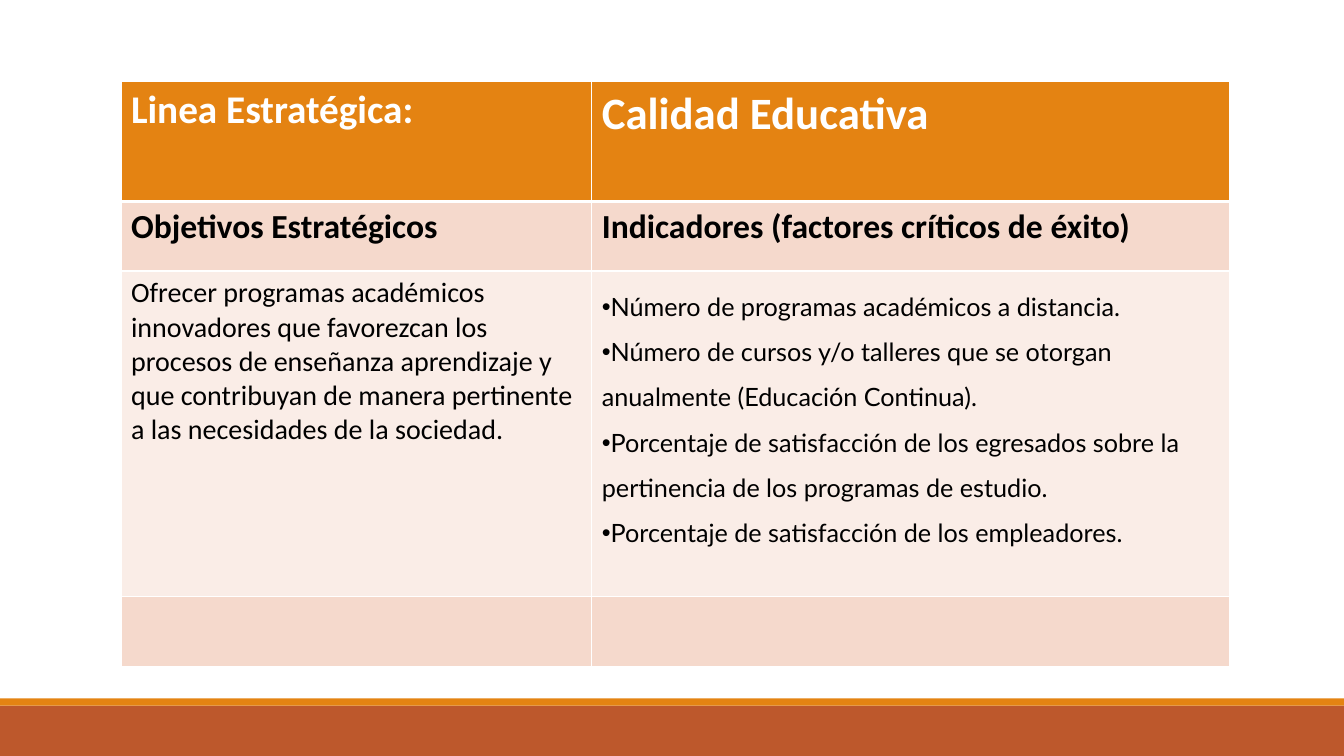
from lxml.etree import SubElement
from pptx import Presentation
from pptx.dml.color import RGBColor
from pptx.enum.shapes import MSO_SHAPE
from pptx.oxml.ns import qn
from pptx.util import Inches, Pt

ORANGE, RUST, WHITE, BLACK = "E48312", "BD582C", "FFFFFF", "000000"
ROW_FILLS = [ORANGE, "F5D9CC", "FAEDE7", "F5D9CC"]
COLUMN_WIDTHS = [4.67, 6.33]
ROW_HEIGHTS = [1.19, 0.69, 3.23, 0.69]

OBJECTIVE = (
    "Ofrecer programas académicos innovadores que favorezcan los procesos de "
    "enseñanza aprendizaje y que contribuyan de manera pertinente a las "
    "necesidades de la sociedad."
)
INDICATORS = [
    "Número de programas académicos a distancia.",
    "Número de cursos y/o talleres que se otorgan anualmente (Educación Continua).",
    "Porcentaje de satisfacción de los egresados sobre la pertinencia de los "
    "programas de estudio.",
    "Porcentaje de satisfacción de los empleadores.",
]


def color(hex_string):
    return RGBColor.from_string(hex_string)


def write_text(paragraph, text, size=20, font="Calibri", fill=BLACK, bold=False,
               spacing=None, bullet=None):
    run = paragraph.add_run()
    run.text = text
    run.font.size = Pt(size)
    run.font.name = font
    run.font.bold = bold
    run.font.color.rgb = color(fill)
    if spacing:
        paragraph.line_spacing = spacing
    if bullet:
        properties = paragraph._p.get_or_add_pPr()
        SubElement(properties, qn("a:buFont"), typeface="Arial")
        SubElement(properties, qn("a:buChar"), char=bullet)


def set_borders(cell, top=1, bottom=1):
    """Draw white cell borders, with widths in points."""
    properties = cell._tc.get_or_add_tcPr()
    widths = {"a:lnL": 1, "a:lnR": 1, "a:lnT": top, "a:lnB": bottom}
    for position, (tag, width) in enumerate(widths.items()):
        line = SubElement(properties, qn(tag), w=str(Pt(width)))
        fill = SubElement(line, qn("a:solidFill"))
        SubElement(fill, qn("a:srgbClr"), val=WHITE)
        # Border lines come before the cell fill
        properties.insert(position, line)


def add_footer(slide, left, top, width, height):
    stripe = 0.07
    bands = [(top + stripe, height - stripe, RUST), (top, stripe, ORANGE)]
    for band_top, band_height, fill in bands:
        shape = slide.shapes.add_shape(
            MSO_SHAPE.RECTANGLE, Inches(left), Inches(band_top),
            Inches(width), Inches(band_height))
        shape.shadow.inherit = False
        shape.fill.solid()
        shape.fill.fore_color.rgb = color(fill)
        shape.line.fill.background()


def add_strategy_table(slide, left, top, width, height):
    table = slide.shapes.add_table(
        len(ROW_HEIGHTS), len(COLUMN_WIDTHS), Inches(left), Inches(top),
        Inches(width), Inches(height)).table
    for column, column_width in zip(table.columns, COLUMN_WIDTHS):
        column.width = Inches(column_width)

    # Row sizes, fills and borders
    for index, row in enumerate(table.rows):
        row.height = Inches(ROW_HEIGHTS[index])
        for cell in row.cells:
            cell.fill.solid()
            cell.fill.fore_color.rgb = color(ROW_FILLS[index])
            set_borders(cell, top=3 if index == 1 else 1,
                        bottom=3 if index == 0 else 1)

    # Headings and objective
    heading = {"fill": WHITE, "bold": True}
    subheading = {"size": 24, "bold": True}
    texts = [
        (0, 0, "Linea Estratégica:", {"size": 28, **heading}),
        (0, 1, "Calidad Educativa", {"size": 32, **heading}),
        (1, 0, "Objetivos Estratégicos", subheading),
        (1, 1, "Indicadores (factores críticos de éxito)", subheading),
        (2, 0, OBJECTIVE, {}),
    ]
    for row, column, text, text_format in texts:
        paragraph = table.cell(row, column).text_frame.paragraphs[0]
        write_text(paragraph, text, **text_format)

    # Bulleted indicators
    frame = table.cell(2, 1).text_frame
    for index, indicator in enumerate(INDICATORS):
        paragraph = frame.add_paragraph() if index else frame.paragraphs[0]
        write_text(paragraph, indicator, size=18, font="Lato", spacing=1.5, bullet="•")


def main():
    presentation = Presentation()
    presentation.slide_width = Inches(13.33)
    presentation.slide_height = Inches(7.5)
    slide = presentation.slides.add_slide(presentation.slide_layouts[6])
    add_footer(slide, 0, 6.93, 13.33, 0.57)
    add_strategy_table(slide, 1.2, 0.81, sum(COLUMN_WIDTHS), sum(ROW_HEIGHTS))
    presentation.save("out.pptx")


if __name__ == "__main__":
    main()
